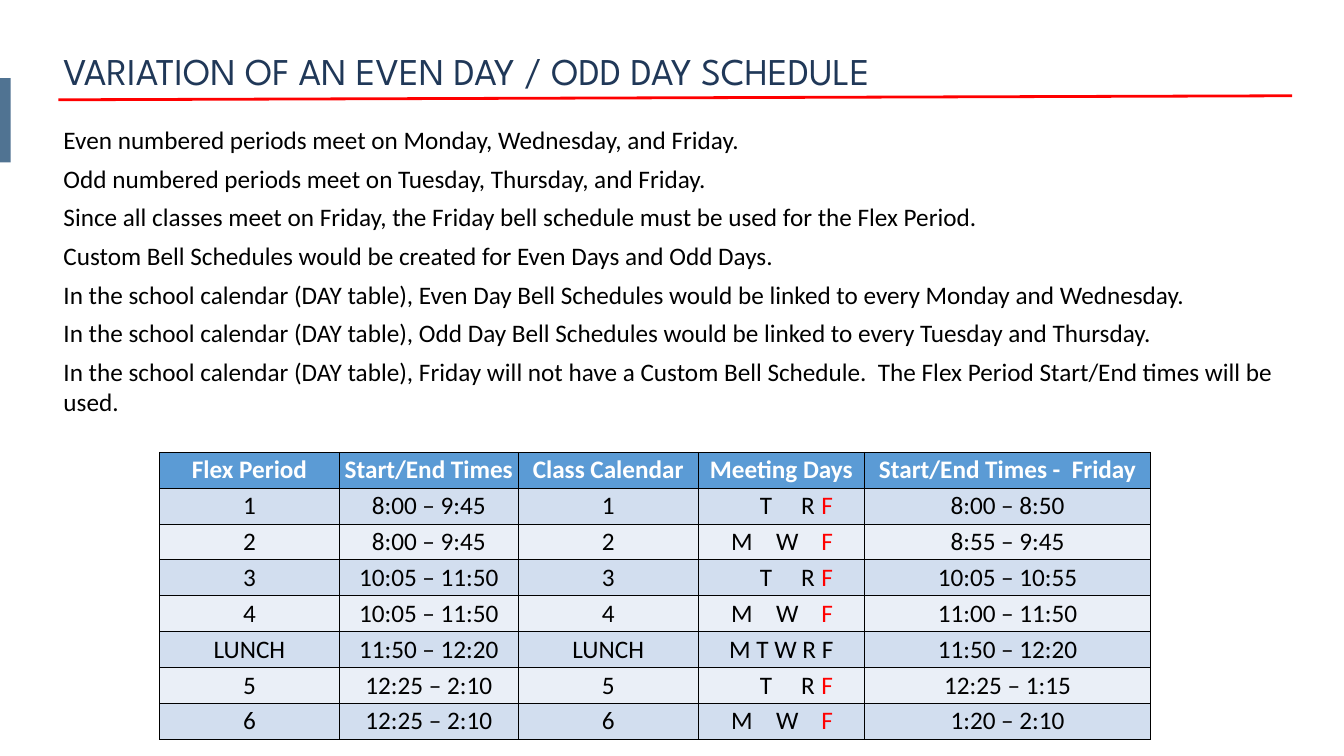
"""Build the even day / odd day schedule slide."""
import pptx
import pptx.dml.color
import pptx.enum.shapes
import pptx.enum.text
import pptx.oxml.ns
import pptx.util
from lxml import etree

TITLE = "VARIATION OF AN EVEN DAY / ODD DAY SCHEDULE"
POINTS = [
    "Even numbered periods meet on Monday, Wednesday, and Friday.",
    "Odd numbered periods meet on Tuesday, Thursday, and Friday.",
    "Since all classes meet on Friday, the Friday bell schedule must be used for the Flex Period.",
    "Custom Bell Schedules would be created for Even Days and Odd Days.",
    "In the school calendar (DAY table), Even Day Bell Schedules would be linked to every Monday and Wednesday.",
    "In the school calendar (DAY table), Odd Day Bell Schedules would be linked to every Tuesday and Thursday.",
    "In the school calendar (DAY table), Friday will not have a Custom Bell Schedule.  "
    "The Flex Period Start/End times will be used.",
]
HEADERS = ["Flex Period", "Start/End Times", "Class Calendar", "Meeting Days", "Start/End Times -  Friday"]
PERIODS = [
    ("1", "8:00 – 9:45", "TRF", "8:00 – 8:50"),
    ("2", "8:00 – 9:45", "MWF", "8:55 – 9:45"),
    ("3", "10:05 – 11:50", "TRF", "10:05 – 10:55"),
    ("4", "10:05 – 11:50", "MWF", "11:00 – 11:50"),
    ("LUNCH", "11:50 – 12:20", "M T W R F", "11:50 – 12:20"),
    ("5", "12:25 – 2:10", "TRF", "12:25 – 1:15"),
    ("6", "12:25 – 2:10", "MWF", "1:20 – 2:10"),
]
DAY_STOPS = {"M": 0.56, "T": 1.13, "W": 1.45, "R": 1.95, "F": 2.35}
COLUMNS = [3.56, 3.56, 3.56, 3.31, 5.67]
ROW_HEIGHT = 0.7
BLACK, RED, WHITE = "000000", "FF0000", "FFFFFF"
HEADER_FILL, BANDS = "5B9BD5", ["D2DEEF", "EAEFF7"]
LEFT = 1.16

inch = pptx.util.Inches
qn = pptx.oxml.ns.qn
ALIGN = pptx.enum.text.PP_ALIGN


def rgb(value):
    return pptx.dml.color.RGBColor.from_string(value)


def paint(fill, color):
    fill.solid()
    fill.fore_color.rgb = rgb(color)


def add_run(p, text, color=BLACK, size=36, font="Calibri", bold=False):
    r = p.add_run()
    r.text = text
    r.font.size, r.font.name, r.font.bold = pptx.util.Pt(size), font, bold
    r.font.color.rgb = rgb(color)


def fill_placeholder(sp, box, texts, **style):
    sp.left, sp.top, sp.width, sp.height = map(inch, box)
    tf = sp.text_frame
    tf.word_wrap = True
    tf.auto_size = pptx.enum.text.MSO_AUTO_SIZE.NONE
    tf.vertical_anchor = pptx.enum.text.MSO_ANCHOR.TOP
    for i, text in enumerate(texts):
        p = tf.add_paragraph() if i else tf.paragraphs[0]
        p.alignment = ALIGN.LEFT
        p.space_before, p.space_after = pptx.util.Pt(0), pptx.util.Pt(12)
        pPr = p._p.get_or_add_pPr()
        pPr.set("marL", "0")
        pPr.set("indent", "0")
        etree.SubElement(pPr, qn("a:buNone"))
        add_run(p, text, **style)


def add_days(p, days):
    p.alignment = ALIGN.LEFT
    tabs = etree.SubElement(p._p.get_or_add_pPr(), qn("a:tabLst"))
    for day in days:
        etree.SubElement(tabs, qn("a:tab"), pos=str(inch(DAY_STOPS[day])), algn="l")
        add_run(p, "\t" + day, RED if day == "F" else BLACK)


def format_cell(cell, color):
    tcPr = cell._tc.get_or_add_tcPr()
    for side in ("a:lnL", "a:lnR", "a:lnT", "a:lnB"):
        ln = etree.SubElement(tcPr, qn(side), w=str(pptx.util.Pt(1)))
        solid = etree.SubElement(ln, qn("a:solidFill"))
        etree.SubElement(solid, qn("a:srgbClr"), val=BLACK)
    paint(cell.fill, color)


def add_schedule(s):
    rows = [HEADERS] + [(period, time, period, days, friday) for period, time, days, friday in PERIODS]
    table = s.shapes.add_table(len(rows), len(COLUMNS), inch(3.17), inch(8.97),
                               inch(sum(COLUMNS)), inch(ROW_HEIGHT * len(rows))).table
    for column, width in zip(table.columns, COLUMNS):
        column.width = inch(width)
    for i, row in enumerate(rows):
        for j, text in enumerate(row):
            cell = table.cell(i, j)
            format_cell(cell, BANDS[(i - 1) % 2] if i else HEADER_FILL)
            p = cell.text_frame.paragraphs[0]
            p.alignment = ALIGN.CENTER
            if text in ("TRF", "MWF"):
                add_days(p, text)
            else:
                add_run(p, text, BLACK if i else WHITE, bold=i == 0)


def main():
    prs = pptx.Presentation()
    prs.slide_width, prs.slide_height = inch(26.67), inch(15)
    s = prs.slides.add_slide(prs.slide_layouts[1])
    paint(s.background.fill, WHITE)

    rule = s.shapes.add_connector(pptx.enum.shapes.MSO_CONNECTOR.STRAIGHT,
                                  inch(LEFT), inch(1.98), inch(25.64), inch(1.9))
    rule.line.width = pptx.util.Pt(4)
    rule.line.color.rgb = rgb(RED)
    etree.SubElement(rule._element.spPr, qn("a:effectLst"))

    fill_placeholder(s.placeholders[1], (LEFT, 2.42, 24.25, 5.96), POINTS)
    accent = s.shapes.add_shape(pptx.enum.shapes.MSO_SHAPE.RECTANGLE, 0, inch(1.55), inch(0.21), inch(1.67))
    accent.shadow.inherit = False
    paint(accent.fill, "507392")
    accent.line.fill.background()
    fill_placeholder(s.shapes.title, (LEFT, 0.9, 20.08, 1.01), [TITLE],
                     color="203858", size=54, font="League Spartan")
    add_schedule(s)
    prs.save("out.pptx")


if __name__ == "__main__":
    main()
